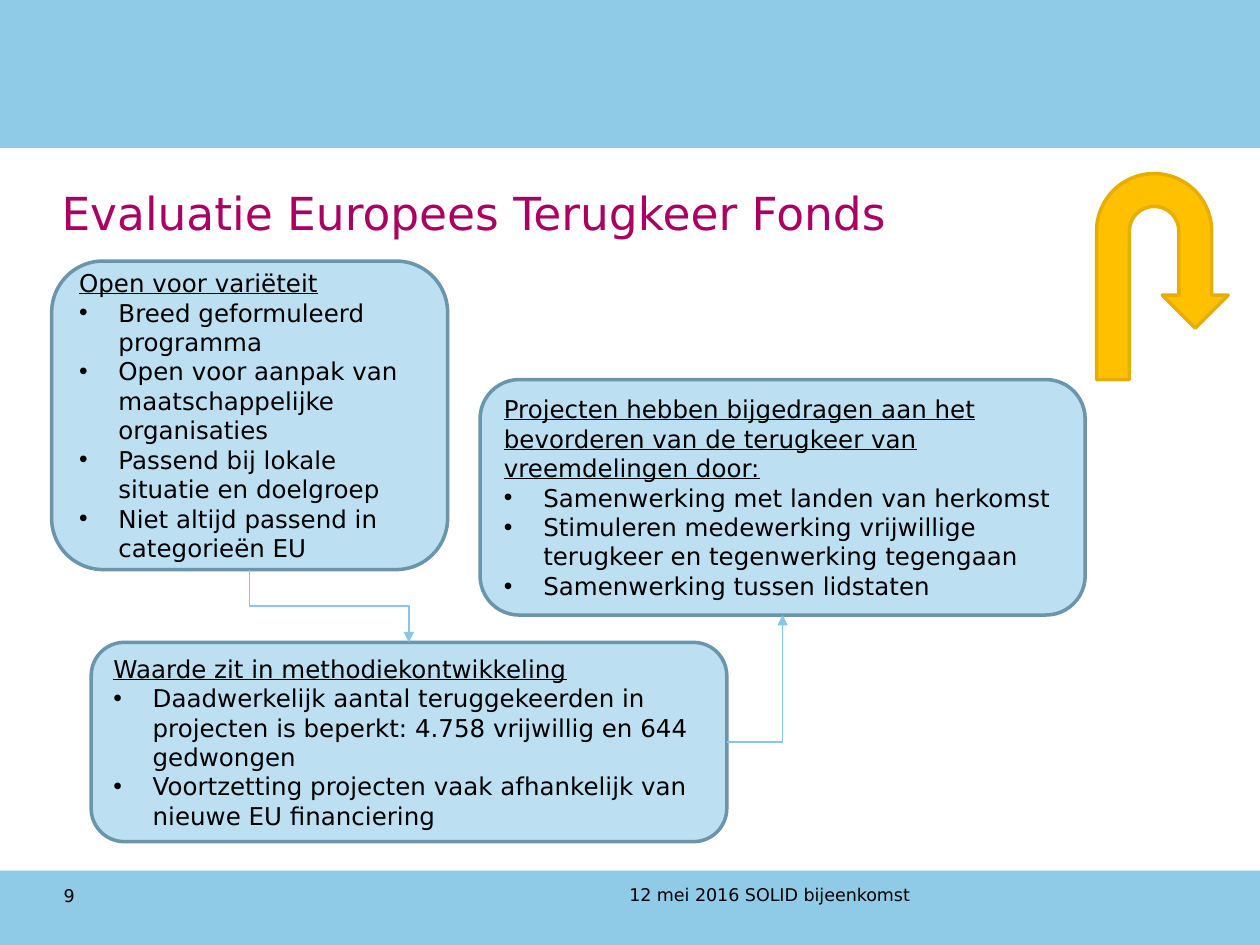
from lxml import etree
from pptx import Presentation
from pptx.dml.color import RGBColor
from pptx.enum.shapes import MSO_CONNECTOR, MSO_SHAPE
from pptx.enum.text import MSO_ANCHOR, PP_ALIGN
from pptx.oxml.ns import qn
from pptx.util import Pt

RECT = MSO_SHAPE.RECTANGLE
ROUND = MSO_SHAPE.ROUNDED_RECTANGLE
UTURN = MSO_SHAPE.U_TURN_ARROW
ELBOW = MSO_CONNECTOR.ELBOW
TOP, MIDDLE = MSO_ANCHOR.TOP, MSO_ANCHOR.MIDDLE
LEFT = PP_ALIGN.LEFT

FONT = "DejaVu Sans"
COLORS = {
    "band": "8FCAE7", "box": "BCDFF1", "box_line": "6A95AB",
    "arrow": "FFC000", "arrow_line": "E6AF00", "link": "8AC6E4",
    "title": "A90061", "text": "000000",
}
INDENT = Pt(22.5)
WIDTH, HEIGHT = 720, 540

VARIETY = (29.5, 149.2, 226.3, 176.3)
PROJECTS = (274.3, 216.9, 345.8, 134.6)
METHOD = (52.1, 367.1, 363.2, 113.9)


def color(name):
    return RGBColor.from_string(COLORS[name])


def style_font(p, size, name, underline=False):
    for r in p.runs:
        r.font.name = FONT
        r.font.size = Pt(size)
        r.font.color.rgb = color(name)
        r.font.underline = underline


def add_shape(s, kind, box, fill, line=None):
    sp = s.shapes.add_shape(kind, *map(Pt, box))
    sp.shadow.inherit = False
    sp.fill.solid()
    sp.fill.fore_color.rgb = color(fill)
    if line:
        sp.line.color.rgb = color(line)
        sp.line.width = Pt(2)
    else:
        sp.line.fill.background()
    return sp


def add_label(s, box, text, size, name="text", anchor=TOP):
    tf = s.shapes.add_textbox(*map(Pt, box)).text_frame
    tf.word_wrap = True
    tf.vertical_anchor = anchor
    tf.text = text
    style_font(tf.paragraphs[0], size, name)


def add_bullet(p):
    pPr = p._p.get_or_add_pPr()
    pPr.set("marL", str(INDENT))
    pPr.set("indent", str(-INDENT))
    etree.SubElement(pPr, qn("a:buFont")).set("typeface", "Arial")
    etree.SubElement(pPr, qn("a:buChar")).set("char", "•")


def add_finding(s, box, heading, points):
    tf = add_shape(s, ROUND, box, "box", "box_line").text_frame
    tf.word_wrap = True
    tf.vertical_anchor = MIDDLE
    tf.text = heading
    for point in points:
        p = tf.add_paragraph()
        p.text = point
        add_bullet(p)
    for i, p in enumerate(tf.paragraphs):
        p.alignment = LEFT
        style_font(p, 14, "text", underline=i == 0)


def add_link(s, begin, end):
    cxn = s.shapes.add_connector(ELBOW, *map(Pt, begin + end))
    cxn.line.color.rgb = color("link")
    cxn.line.width = Pt(0.75)
    spPr = cxn._element.spPr
    etree.SubElement(spPr.find(qn("a:ln")), qn("a:tailEnd")).set("type", "triangle")
    etree.SubElement(spPr, qn("a:effectLst"))
    return spPr


def link_down(s, upper, lower):
    x1, y1 = upper[0] + upper[2] / 2, upper[1] + upper[3]
    x2, y2 = lower[0] + lower[2] / 2, lower[1]
    cx, cy = (x1 + x2) / 2, (y1 + y2) / 2
    dx, dy = (x2 - x1) / 2, (y2 - y1) / 2
    spPr = add_link(s, (cx + dy, cy - dx), (cx - dy, cy + dx))
    spPr.find(qn("a:xfrm")).set("rot", str(270 * 60000))


def link_up(s, lower, upper):
    begin = lower[0] + lower[2], lower[1] + lower[3] / 2
    end = upper[0] + upper[2] / 2, upper[1] + upper[3]
    spPr = add_link(s, begin, end)
    spPr.find(qn("a:prstGeom")).set("prst", "bentConnector2")


def add_frame(s):
    add_shape(s, RECT, (0, 0, WIDTH, 84.5), "band")
    add_shape(s, RECT, (0, 497.5, WIDTH, HEIGHT - 497.5), "band")
    add_label(s, (352.5, 501.8, 327.6, 28), "12 mei 2016 SOLID bijeenkomst", 10)
    add_label(s, (29.3, 502, 56, 28), "9", 10)


def add_findings(s):
    add_finding(s, PROJECTS,
                "Projecten hebben bijgedragen aan het bevorderen van de terugkeer "
                "van vreemdelingen door:",
                ["Samenwerking met landen van herkomst",
                 "Stimuleren medewerking vrijwillige terugkeer en tegenwerking tegengaan",
                 "Samenwerking tussen lidstaten"])
    add_finding(s, VARIETY, "Open voor variëteit",
                ["Breed geformuleerd programma",
                 "Open voor aanpak van maatschappelijke organisaties",
                 "Passend bij lokale situatie en doelgroep",
                 "Niet altijd passend in categorieën EU"])
    add_finding(s, METHOD, "Waarde zit in methodiekontwikkeling",
                ["Daadwerkelijk aantal teruggekeerden in projecten is beperkt: "
                 "4.758 vrijwillig en 644 gedwongen",
                 "Voortzetting projecten vaak afhankelijk van nieuwe EU financiering"])
    link_down(s, VARIETY, METHOD)
    link_up(s, METHOD, PROJECTS)


def main():
    prs = Presentation()
    prs.slide_width, prs.slide_height = Pt(WIDTH), Pt(HEIGHT)
    s = prs.slides.add_slide(prs.slide_layouts[6])
    add_frame(s)
    add_label(s, (28.1, 99.2, 648, 44.6), "Evaluatie Europees Terugkeer Fonds",
              26, "title", MIDDLE)
    add_shape(s, UTURN, (626.6, 99.2, 75.2, 117.7), "arrow", "arrow_line")
    add_findings(s)
    prs.save("out.pptx")


if __name__ == "__main__":
    main()
